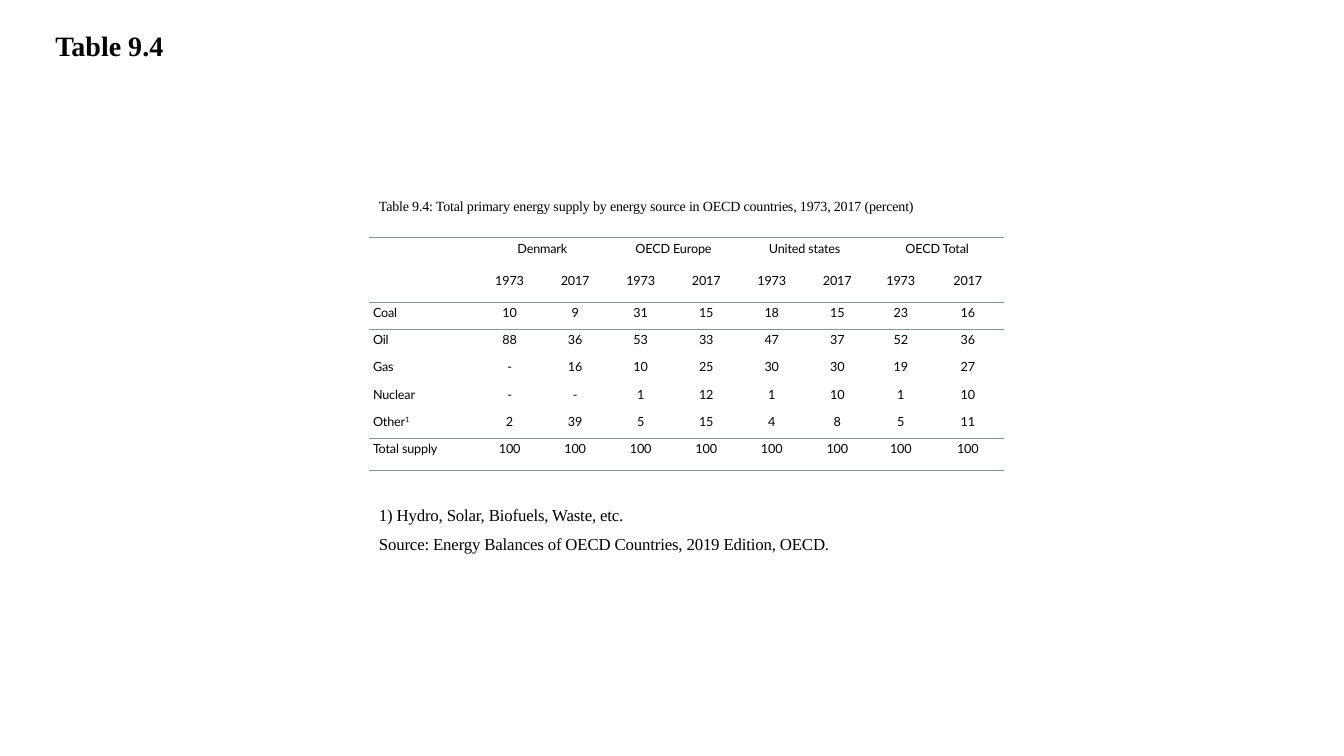
import pptx
import pptx.util
import pptx.dml.color
import pptx.enum.text
import pptx.oxml

Inches, Pt = pptx.util.Inches, pptx.util.Pt
ALIGN = pptx.enum.text.PP_ALIGN
SERIF = "Times New Roman"
INK, RULE = "000000", "7F9C90"


def add_run(para, text, size, face, bold=False, track=-10, lift=0):
    """Add one run; track is in hundredths of a point, lift in percent."""
    run = para.add_run()
    run.text = text
    run.font.size = Pt(size)
    run.font.name = face
    run.font.bold = bold
    run.font.color.rgb = pptx.dml.color.RGBColor.from_string(INK)
    props = run.font._element
    if track:
        props.set("spc", str(track))
    if lift:
        props.set("baseline", str(lift * 1000))


def add_box(left, top, width, height):
    frame = slide.shapes.add_textbox(
        Inches(left), Inches(top), Inches(width), Inches(height)).text_frame
    frame.word_wrap = True
    return frame


deck = pptx.Presentation()
deck.slide_width, deck.slide_height = Inches(13.33), Inches(7.5)
slide = deck.slides.add_slide(deck.slide_layouts[6])

# Energy table
groups = ["Denmark", "OECD Europe", "United states", "OECD Total"]
rows = [
    [""] + [text for name in groups for text in (name, "")],
    [""] + ["1973", "2017"] * len(groups),
    ["Coal", "10", "9", "31", "15", "18", "15", "23", "16"],
    ["Oil", "88", "36", "53", "33", "47", "37", "52", "36"],
    ["Gas", "-", "16", "10", "25", "30", "30", "19", "27"],
    ["Nuclear", "-", "-", "1", "12", "1", "10", "1", "10"],
    ["Other", "2", "39", "5", "15", "4", "8", "5", "11"],
    ["Total supply"] + ["100"] * 8,
]
widths = [1.07] + [0.65] * 6 + [0.61, 0.72]
heights = [0.32] * 2 + [0.27] * 5 + [0.32]
rules = {0: "T", 1: "B", 2: "T", 6: "B", 7: "TB"}

holder = slide.shapes.add_table(
    len(rows), len(widths), Inches(3.66), Inches(2.36), Inches(6.28), Inches(2.33))
table = holder.table
table.first_row = table.horz_banding = False
# The style without fills or grid lines
style = holder.element.xpath(".//a:tableStyleId")[0]
style.text = "{2D5ABB26-0587-4C30-8999-92F81FD0307C}"
for col, width in zip(table.columns, widths):
    col.width = Inches(width)
for row, height in zip(table.rows, heights):
    row.height = Inches(height)

for i, row in enumerate(rows):
    for j, text in enumerate(row):
        cell = table.cell(i, j)
        cell.margin_left = cell.margin_right = Inches(0.04)
        cell.margin_top = cell.margin_bottom = 0
        cell.fill.background()
        para = cell.text_frame.paragraphs[0]
        para.alignment = ALIGN.CENTER if j else ALIGN.JUSTIFY
        para.line_spacing = Pt(12.8)
        if text:
            add_run(para, text, 9, "Lato")
        if text == "Other":
            add_run(para, "1", 9, "Lato", lift=30)
        props = cell._tc.get_or_add_tcPr()
        for k, side in enumerate(rules.get(i, "")):
            props.insert(k, pptx.oxml.parse_xml(
                f'<a:ln{side} xmlns:a="http://schemas.openxmlformats.org/drawingml/2006/main"'
                f' w="{Pt(1)}"><a:solidFill><a:srgbClr val="{RULE}"/></a:solidFill></a:ln{side}>'))

for j in range(1, len(widths), 2):
    table.cell(0, j).merge(table.cell(0, j + 1))

# Caption
para = add_box(3.66, 1.92, 6.66, 0.26).paragraphs[0]
para.alignment = ALIGN.JUSTIFY
para.line_spacing, para.space_after = Pt(11), Pt(6)
add_run(para, "Table 9.4: Total primary energy supply by energy source in "
        "OECD countries, 1973, 2017 (percent)", 10, SERIF)

# Notes under the table
notes = add_box(3.66, 4.96, 6.66, 0.59)
para = notes.paragraphs[0]
for text, before, after in [
    ("1) Hydro, Solar, Biofuels, Waste, etc.", 4, 4),
    ("Source: Energy Balances of OECD Countries, 2019 Edition, OECD.", 2, 14.5),
]:
    if para.runs:
        para = notes.add_paragraph()
    para.space_before, para.space_after = Pt(before), Pt(after)
    add_run(para, text, 12, SERIF)

# Title
para = add_box(0.45, 0.27, 1.98, 0.97).paragraphs[0]
para.line_spacing = 0.9
add_run(para, "Table 9.4", 20, SERIF, bold=True, track=0)

deck.save("out.pptx")
